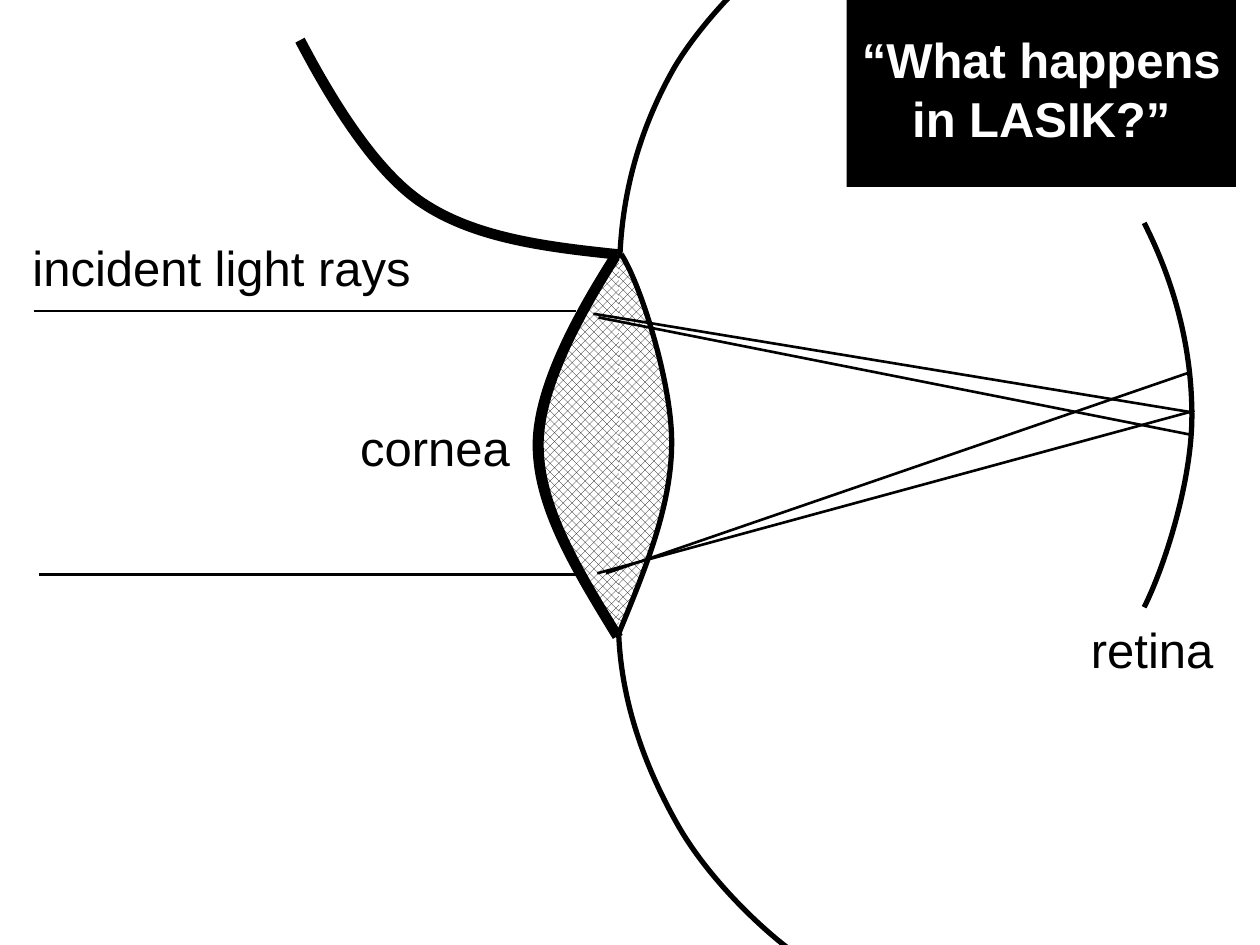
from lxml.etree import SubElement
from pptx import Presentation
from pptx.dml.color import RGBColor
from pptx.enum.dml import MSO_PATTERN
from pptx.enum.shapes import MSO_CONNECTOR
from pptx.enum.text import MSO_ANCHOR, MSO_AUTO_SIZE, PP_ALIGN
from pptx.oxml.ns import qn
from pptx.util import Pt

COLORS = {"ink": "000000", "paper": "FFFFFF"}
FONT = "Arial"
THIN, MEDIUM, THICK = 1.5, 3, 6

# Curves: a start point, then three points for each Bezier segment
CORNEA_FRONT = [(352.8, 363.6), (330.5, 326.9), (307.4, 290.2), (307.4, 254.2),
                (307.4, 217.4), (337.7, 168.5), (352.8, 144.7)]
CORNEA_BACK = [(353.5, 362.2), (368.6, 325.4), (383.8, 289.4), (383.8, 252.7),
               (383.8, 216), (363.6, 155.5), (353.5, 143.3)]
UPPER_WALL = [(354.2, 147.6), (355.7, 106.6), (367.2, 70.6), (385.2, 38.9),
              (403.9, 7.2), (440.6, -27.4), (463.7, -41.8)]
LOWER_WALL = [(353.5, 361.4), (355, 402.5), (369.4, 439.9), (387.4, 471.6),
              (405.4, 503.3), (439.9, 536.4), (463, 550.8)]
FLAP = [(352.8, 145.4), (311.8, 141.1), (271.4, 136.1), (241.2, 115.9),
        (211, 95.8), (184.3, 47.5), (171.4, 23)]
RETINA = [(653.8, 127.4), (672.5, 164.2), (681.1, 201.6), (681.1, 237.6),
          (681.1, 274.3), (666, 322.6), (653.8, 347)]

# Rays: start x, start y, end x, end y
INCIDENT_RAYS = [(22.3, 328.3, 329, 328.3), (19.4, 177.8, 329, 177.8)]
FOCUSED_RAYS = [(679.7, 235.4, 339.1, 179.3), (682.6, 234.7, 341.3, 327.6)]
CROSSED_RAYS = [(680.4, 248.4, 342, 181.4), (679, 213.1, 346.3, 327.6)]


def color(name):
    return RGBColor.from_string(COLORS[name])


def write_text(box, text, ink="ink", bold=False, align=PP_ALIGN.LEFT):
    frame = box.text_frame
    frame.word_wrap = False
    frame.auto_size = MSO_AUTO_SIZE.SHAPE_TO_FIT_TEXT
    frame.vertical_anchor = MSO_ANCHOR.MIDDLE
    frame.text = text
    for para in frame.paragraphs:
        para.alignment = align
        for span in para.runs:
            span.font.name = FONT
            span.font.size = Pt(28)
            span.font.bold = bold
            span.font.color.rgb = color(ink)


def place(box, left, top, width, height):
    box.left, box.top, box.width, box.height = map(Pt, (left, top, width, height))


def add_title(page):
    title = page.shapes.title
    place(title, 483.8, 13, 222.5, 74.9)
    title.fill.solid()
    title.fill.fore_color.rgb = color("ink")
    write_text(title, "“What happens\nin LASIK?”", ink="paper", bold=True,
               align=PP_ALIGN.CENTER)


def add_label(page, text, left, top, width):
    box = page.shapes.add_textbox(Pt(left), Pt(top), Pt(width), Pt(41))
    write_text(box, text)


def add_curve(page, points, weight, shaded=False, shift=0):
    corners = [(Pt(x + shift), Pt(y)) for x, y in points]
    builder = page.shapes.build_freeform(*corners[0])
    builder.add_line_segments(corners[1:], close=False)
    curve = builder.convert_to_shape()

    # Merge each three line segments into one Bezier segment
    segments = list(curve._element.iter(qn("a:lnTo")))
    for first, second, third in zip(*[iter(segments)] * 3):
        first.tag = qn("a:cubicBezTo")
        for segment in (second, third):
            first.append(segment[0])
            segment.getparent().remove(segment)

    if shaded:
        curve.fill.patterned()
        curve.fill.pattern = MSO_PATTERN.PERCENT_50
        curve.fill.fore_color.rgb = color("ink")
        curve.fill.back_color.rgb = color("paper")
    else:
        curve.fill.solid()
        curve.fill.fore_color.rgb = color("paper")
    curve.line.color.rgb = color("ink")
    curve.line.width = Pt(weight)
    curve.shadow.inherit = False


def add_rays(page, rays):
    group = page.shapes.add_group_shape()
    for ray in rays:
        line = group.shapes.add_connector(MSO_CONNECTOR.STRAIGHT, *map(Pt, ray))
        line.line.color.rgb = color("ink")
        line.line.width = Pt(THIN)
        SubElement(line._element.spPr, qn("a:effectLst"))


def main():
    deck = Presentation()
    deck.slide_width, deck.slide_height = Pt(720), Pt(540)
    page = deck.slides.add_slide(deck.slide_layouts[5])
    add_title(page)

    # Cornea: thick front edge, then the two shaded halves
    add_curve(page, CORNEA_FRONT, THICK)
    add_curve(page, CORNEA_FRONT, MEDIUM, shaded=True, shift=1.8)
    add_curve(page, CORNEA_BACK, MEDIUM, shaded=True)

    # Eye wall, lifted flap and retina
    add_curve(page, UPPER_WALL, MEDIUM)
    add_curve(page, LOWER_WALL, MEDIUM)
    add_curve(page, FLAP, THICK)
    add_rays(page, INCIDENT_RAYS)
    add_curve(page, RETINA, MEDIUM)

    # Labels
    add_label(page, "retina", 616.3, 350.6, 85.7)
    add_label(page, "cornea", 198.7, 234.7, 101.5)
    add_label(page, "incident light rays", 11.5, 131.8, 233.3)

    # Refracted rays
    add_rays(page, FOCUSED_RAYS)
    add_rays(page, CROSSED_RAYS)
    deck.save("out.pptx")


if __name__ == "__main__":
    main()
